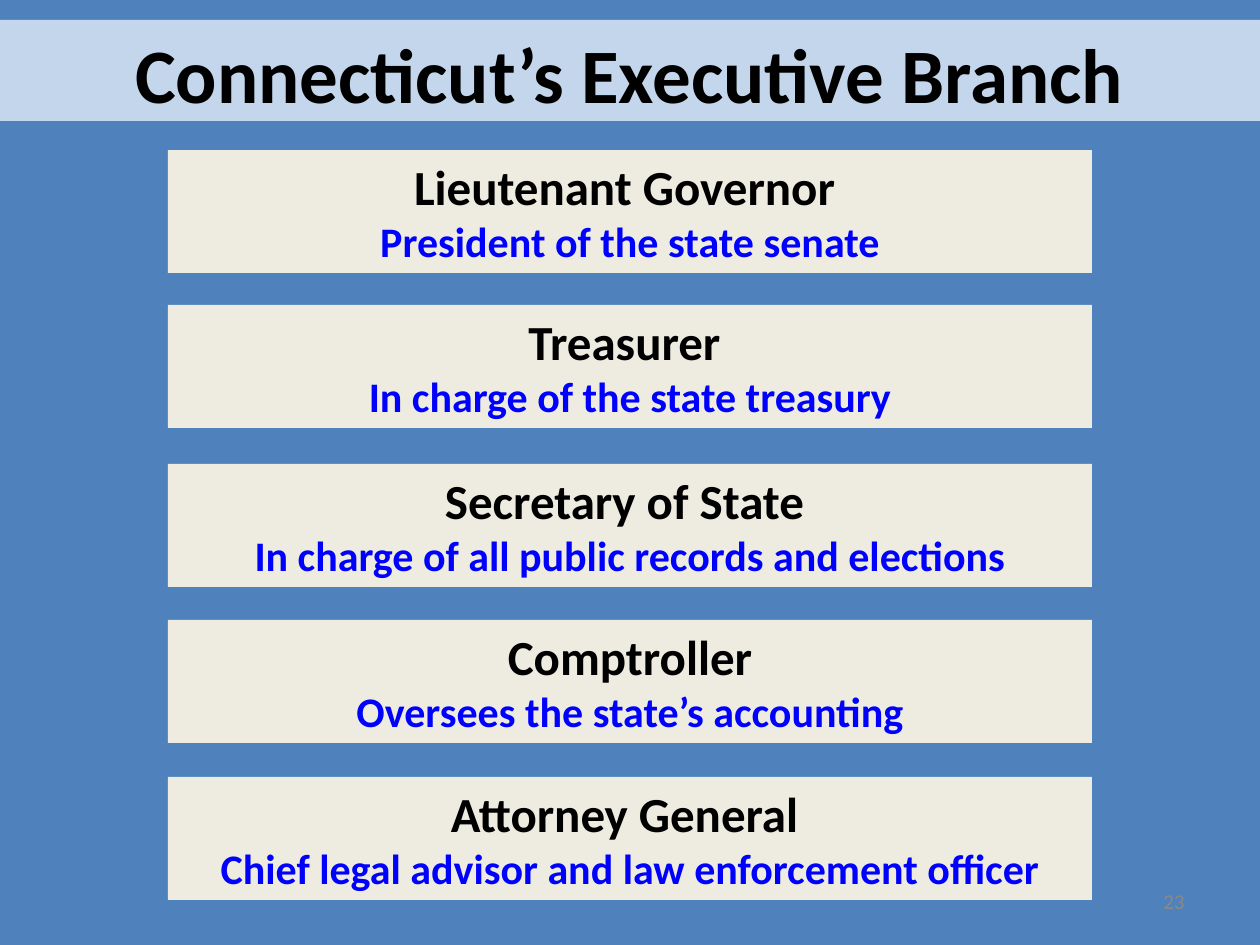
from dataclasses import dataclass

import pptx
import pptx.dml.color
import pptx.enum.shapes
import pptx.enum.text
import pptx.util

RGBColor = pptx.dml.color.RGBColor
ALIGN = pptx.enum.text.PP_ALIGN

PX = 914400 // 126
FONT = "Calibri"
BLUE_BACKGROUND = RGBColor(0x4F, 0x81, 0xBD)
BANNER = RGBColor(0xC4, 0xD6, 0xEB)
CREAM = RGBColor(0xEE, 0xEC, 0xE1)
BLACK = RGBColor(0, 0, 0)
DUTY_BLUE = RGBColor(0, 0, 0xFF)
GREY = RGBColor(0x89, 0x89, 0x89)


@dataclass(frozen=True)
class Line:
    text: str
    size: int
    color: RGBColor
    bold: bool = True
    align: ALIGN = ALIGN.CENTER


@dataclass(frozen=True)
class Office:
    top: int
    title: str
    duty: str


OFFICES = [
    Office(150, "Lieutenant Governor ", "President of the state senate"),
    Office(305, "Treasurer ", "In charge of the state treasury"),
    Office(464, "Secretary of State ", "In charge of all public records and elections"),
    Office(620, "Comptroller", "Oversees the state’s accounting"),
    Office(777, "Attorney General ", "Chief legal advisor and law enforcement officer"),
]


def write_lines(tf, lines: list[Line]) -> None:
    tf.word_wrap = True
    tf.text = "\n".join(line.text for line in lines)
    for p, line in zip(tf.paragraphs, lines):
        p.alignment = line.align
        for r in p.runs:
            r.font.name = FONT
            r.font.size = pptx.util.Pt(line.size)
            r.font.bold = line.bold
            r.font.color.rgb = line.color


def add_panel(s, left: int, top: int, width: int, height: int,
              fill: RGBColor, lines: list[Line]) -> None:
    sp = s.shapes.add_shape(pptx.enum.shapes.MSO_SHAPE.RECTANGLE,
                            left * PX, top * PX, width * PX, height * PX)
    sp.shadow.inherit = False
    sp.fill.solid()
    sp.fill.fore_color.rgb = fill
    sp.line.fill.background()
    tf = sp.text_frame
    write_lines(tf, lines)
    tf.vertical_anchor = pptx.enum.text.MSO_ANCHOR.TOP
    tf.auto_size = pptx.enum.text.MSO_AUTO_SIZE.SHAPE_TO_FIT_TEXT


def add_slide_number(s, number: int) -> None:
    sp = s.shapes.add_textbox(903 * PX, 876 * PX, 294 * PX, 50 * PX)
    write_lines(sp.text_frame, [Line(str(number), 12, GREY, False, ALIGN.RIGHT)])
    sp.text_frame.vertical_anchor = pptx.enum.text.MSO_ANCHOR.MIDDLE


def main() -> None:
    prs = pptx.Presentation()
    prs.slide_width = pptx.util.Inches(10)
    prs.slide_height = pptx.util.Inches(7.5)
    s = prs.slides.add_slide(prs.slide_layouts[6])
    s.background.fill.solid()
    s.background.fill.fore_color.rgb = BLUE_BACKGROUND

    add_slide_number(s, 23)
    for office in OFFICES:
        add_panel(s, 168, office.top, 924, 123, CREAM,
                  [Line(office.title, 28, BLACK), Line(office.duty, 24, DUTY_BLUE)])
    add_panel(s, 0, 20, 1260, 101, BANNER,
              [Line("Connecticut’s Executive Branch", 44, BLACK)])
    prs.save("out.pptx")


if __name__ == "__main__":
    main()
